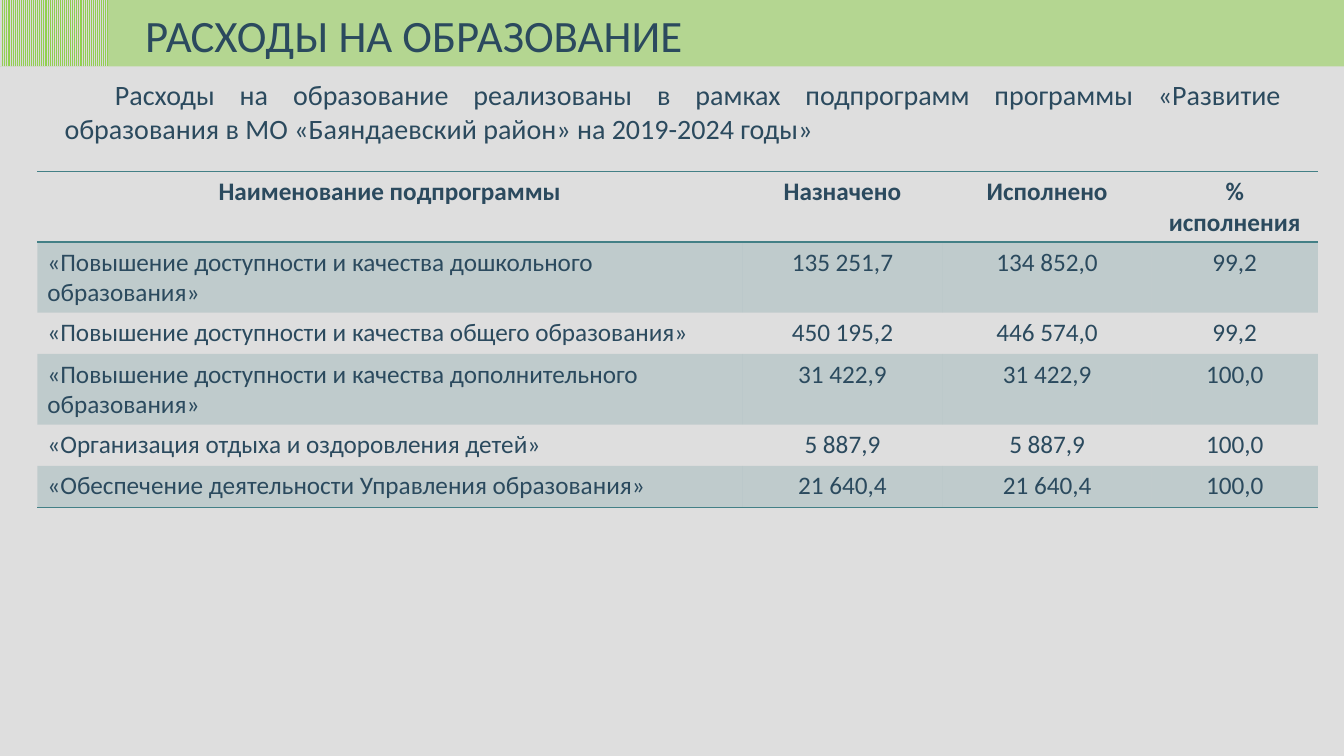
from dataclasses import dataclass

from lxml import etree
from pptx import Presentation, util as u
from pptx.dml.color import RGBColor
from pptx.dml.fill import FillFormat
from pptx.enum import dml, shapes, text
from pptx.oxml import ns
from pptx.shapes.autoshape import Shape
from pptx.table import Table, _Cell
from pptx.text.text import TextFrame


@dataclass(frozen=True)
class Theme:
    font: str = "Calibri"
    ink: str = "2B4A5E"
    page: str = "DEDEDE"
    green: str = "92D050"
    stripe: str = "D9D9D9"
    teal: str = "438086"
    band_opacity: int = 54
    row_opacity: int = 20
    title_size: int = 32
    body_size: int = 20
    table_size: int = 18
    rule_width: int = 1


@dataclass(frozen=True)
class Box:
    """An area in percent of the slide's width and height."""
    left: float
    top: float
    width: float
    height: float

    def place(self) -> tuple[int, int, int, int]:
        return across(self.left), down(self.top), across(self.width), down(self.height)


@dataclass(frozen=True)
class Subprogramme:
    name: str
    assigned: str
    executed: str
    percent: str

    def texts(self) -> tuple[str, ...]:
        return self.name, self.assigned, self.executed, self.percent


THEME = Theme()
WIDTH, HEIGHT = u.Inches(13.33), u.Inches(7.5)

BAND = Box(0, 0, 100, 8.8)
STRIPES = Box(0, 0, 8.03, 8.8)
TITLE = Box(10.05, 0.4, 41.86, 8.53)
INTRO = Box(4.05, 9.6, 92.05, 10.27)
TABLE = Box(2.78, 22.67, 95.28, 32.82)
COLUMNS = (52.44, 14.93, 15.53, 12.38)

TITLE_TEXT = "РАСХОДЫ НА ОБРАЗОВАНИЕ"
INTRO_TEXT = (
    "Расходы на образование реализованы в рамках подпрограмм программы "
    "«Развитие образования в МО «Баяндаевский район» на 2019-2024 годы»"
)
ROWS = (
    Subprogramme("Наименование подпрограммы", "Назначено", "Исполнено", "% исполнения"),
    Subprogramme("«Повышение доступности и качества дошкольного образования»",
                 "135 251,7", "134 852,0", "99,2"),
    Subprogramme("«Повышение доступности и качества общего образования»",
                 "450 195,2", "446 574,0", "99,2"),
    Subprogramme("«Повышение доступности и качества дополнительного образования»",
                 "31 422,9", "31 422,9", "100,0"),
    Subprogramme("«Организация отдыха и оздоровления детей»",
                 "5 887,9", "5 887,9", "100,0"),
    Subprogramme("«Обеспечение деятельности Управления образования»",
                 "21 640,4", "21 640,4", "100,0"),
)
PLAIN_TABLE_STYLE = "{2D5ABB26-0587-4C30-8999-92F81FD0307C}"


def across(percent: float) -> int:
    return round(WIDTH * percent / 100)


def down(percent: float) -> int:
    return round(HEIGHT * percent / 100)


def rgb(code: str) -> RGBColor:
    return RGBColor.from_string(code)


def fill_translucent(fill: FillFormat, holder: etree._Element, color: str, opacity: int) -> None:
    """Fill with a colour; holder is the XML element that contains the fill."""
    fill.solid()
    fill.fore_color.rgb = rgb(color)
    tint = holder.find(ns.qn("a:solidFill")).find(ns.qn("a:srgbClr"))
    etree.SubElement(tint, ns.qn("a:alpha"), val=str(opacity * 1000))


def write(frame: TextFrame, words: str, *, size: int, bold: bool = False,
          align: text.PP_ALIGN = text.PP_ALIGN.LEFT, indent: float = 0) -> None:
    para = frame.paragraphs[0]
    para.alignment = align
    para.space_before = u.Pt(0)
    span = para.add_run()
    span.text = words
    span.font.name = THEME.font
    span.font.size = u.Pt(size)
    span.font.bold = bold
    span.font.color.rgb = rgb(THEME.ink)
    settings = para._p.get_or_add_pPr()
    settings.set("marL", "0")
    settings.set("indent", str(u.Inches(indent)))


def add_rectangle(page, box: Box) -> Shape:
    shape = page.shapes.add_shape(shapes.MSO_SHAPE.RECTANGLE, *box.place())
    shape.shadow.inherit = False
    shape.line.fill.background()
    return shape


def set_placeholder(holder, box: Box, words: str, *, wrap: bool, **style) -> None:
    """Move a placeholder to its box, in front of earlier shapes, and fill it."""
    holder.left, holder.top, holder.width, holder.height = box.place()
    frame = holder.text_frame
    frame.word_wrap = wrap
    frame.auto_size = text.MSO_AUTO_SIZE.SHAPE_TO_FIT_TEXT
    frame.vertical_anchor = text.MSO_ANCHOR.TOP
    write(frame, words, **style)
    holder.element.getparent().append(holder.element)


def remove_bullet(holder) -> None:
    settings = holder.text_frame.paragraphs[0]._p.get_or_add_pPr()
    etree.SubElement(settings, ns.qn("a:buNone"))


def rule_cell(cell: _Cell, *, top: bool, bottom: bool) -> None:
    """Draw horizontal rules; the lines must precede the cell's fill."""
    settings = cell._tc.get_or_add_tcPr()
    sides = [side for side, wanted in (("a:lnT", top), ("a:lnB", bottom)) if wanted]
    for place, side in enumerate(sides):
        line = etree.Element(ns.qn(side), w=str(u.Pt(THEME.rule_width)))
        paint = etree.SubElement(line, ns.qn("a:solidFill"))
        etree.SubElement(paint, ns.qn("a:srgbClr"), val=THEME.teal)
        settings.insert(place, line)


def fill_table(table: Table) -> None:
    last = len(ROWS) - 1
    for column, share in zip(table.columns, COLUMNS):
        column.width = across(share)
    for r, row in enumerate(ROWS):
        table.rows[r].height = down(TABLE.height / len(ROWS))
        for c, words in enumerate(row.texts()):
            cell = table.cell(r, c)
            if r % 2:
                fill_translucent(cell.fill, cell._tc.get_or_add_tcPr(),
                                 THEME.teal, THEME.row_opacity)
            else:
                cell.fill.background()
            rule_cell(cell, top=r == 0, bottom=r in (0, last))
            centred = r == 0 or c > 0
            write(cell.text_frame, words, size=THEME.table_size, bold=r == 0,
                  align=text.PP_ALIGN.CENTER if centred else text.PP_ALIGN.LEFT)


def add_table(page) -> None:
    frame = page.shapes.add_table(len(ROWS), len(COLUMNS), *TABLE.place())
    table = frame.table
    table.first_row = table.horz_banding = False
    table._tbl.tblPr.find(ns.qn("a:tableStyleId")).text = PLAIN_TABLE_STYLE
    fill_table(table)


def main() -> None:
    deck = Presentation()
    deck.slide_width, deck.slide_height = WIDTH, HEIGHT
    page = deck.slides.add_slide(deck.slide_layouts[1])
    page.background.fill.solid()
    page.background.fill.fore_color.rgb = rgb(THEME.page)
    title, intro = page.placeholders

    band = add_rectangle(page, BAND)
    fill_translucent(band.fill, band.element.spPr, THEME.green, THEME.band_opacity)
    set_placeholder(title, TITLE, TITLE_TEXT, wrap=False, size=THEME.title_size)
    stripes = add_rectangle(page, STRIPES)
    stripes.fill.patterned()
    stripes.fill.pattern = dml.MSO_PATTERN.LIGHT_VERTICAL
    stripes.fill.fore_color.rgb = rgb(THEME.green)
    stripes.fill.back_color.rgb = rgb(THEME.stripe)
    set_placeholder(intro, INTRO, INTRO_TEXT, wrap=True, size=THEME.body_size,
                    align=text.PP_ALIGN.JUSTIFY, indent=0.5)
    remove_bullet(intro)
    add_table(page)
    deck.save("out.pptx")


if __name__ == "__main__":
    main()
